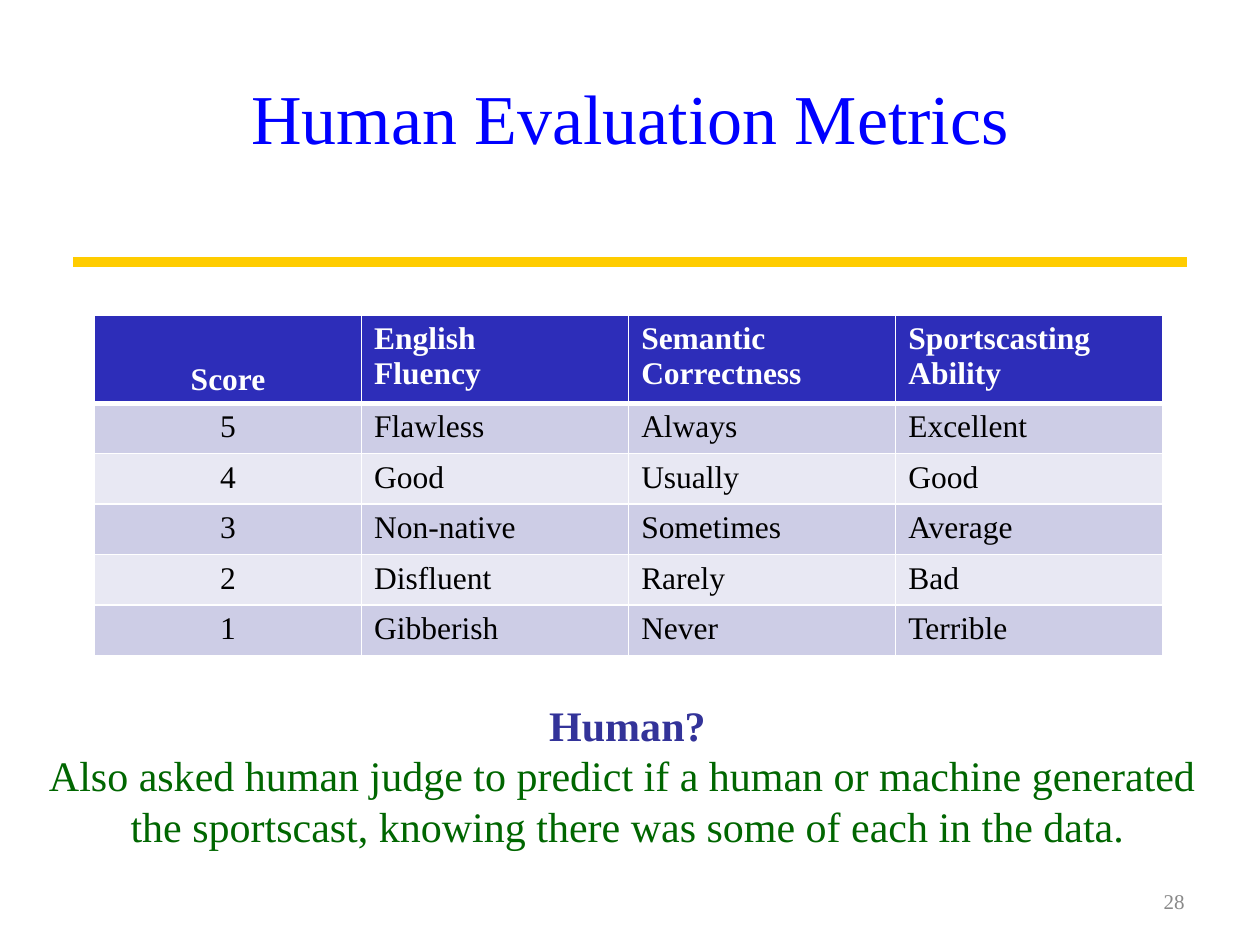
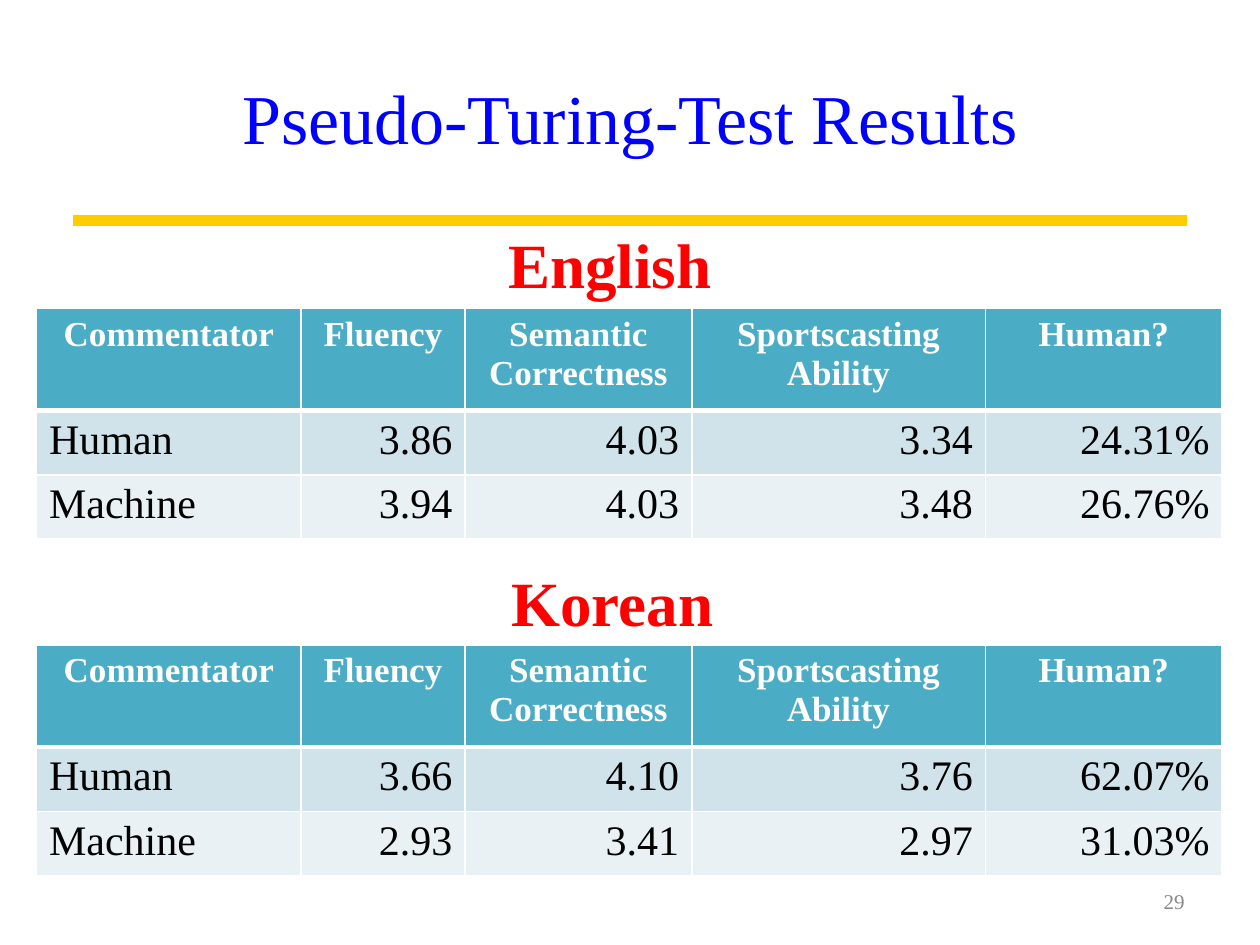
"""Build two slides on human evaluation of generated sportscasts."""
from lxml.etree import SubElement
from pptx import Presentation
from pptx.dml.color import RGBColor
from pptx.enum.shapes import MSO_CONNECTOR as Connector
from pptx.enum.text import MSO_ANCHOR as Anchor, PP_ALIGN as Align
from pptx.oxml.ns import qn
from pptx.util import Emu, Pt

PX = 9144
FONT = "Times New Roman"
WHITE = RGBColor(0xFF, 0xFF, 0xFF)
BLACK = RGBColor(0x00, 0x00, 0x00)
TITLE_BLUE = RGBColor(0x00, 0x00, 0xFF)
RULE_GOLD = RGBColor(0xFF, 0xCC, 0x00)
NUMBER_GRAY = RGBColor(0x89, 0x89, 0x89)
QUESTION_BLUE = RGBColor(0x33, 0x33, 0x99)
NOTE_GREEN = RGBColor(0x00, 0x66, 0x00)
LANGUAGE_RED = RGBColor(0xFF, 0x00, 0x00)
INDIGO_FILLS = (RGBColor(0x2D, 0x2D, 0xB9), RGBColor(0xCD, 0xCD, 0xE6), RGBColor(0xE8, 0xE8, 0xF3))
TEAL_FILLS = (RGBColor(0x4B, 0xAC, 0xC6), RGBColor(0xD0, 0xE3, 0xEA), RGBColor(0xE9, 0xF1, 0xF5))


def write(frame, text, size, color, bold=False, align=Align.CENTER):
    for line in text.split("\n"):
        para = frame.add_paragraph() if frame.text else frame.paragraphs[0]
        para.alignment = align
        span = para.add_run()
        span.text = line
        span.font.name = FONT
        span.font.size = Pt(size)
        span.font.bold = bold
        span.font.color.rgb = color


def add_grid(page, left, top, widths, heights, rows, fills, sizes, head_aligns, body_aligns):
    frame = page.shapes.add_table(len(rows), len(widths), Emu(left * PX), Emu(top * PX),
                                  Emu(sum(widths) * PX), Emu(sum(heights) * PX))
    grid = frame.table
    for column, width in zip(grid.columns, widths):
        column.width = Emu(width * PX)
    for r, (texts, height) in enumerate(zip(rows, heights)):
        grid.rows[r].height = Emu(height * PX)
        is_head = r == 0
        aligns = head_aligns if is_head else body_aligns
        for c, (text, align) in enumerate(zip(texts, aligns)):
            cell = grid.cell(r, c)
            write(cell.text_frame, text, sizes[0 if is_head else 1],
                  WHITE if is_head else BLACK, is_head, align)
            cell.fill.solid()
            cell.fill.fore_color.rgb = fills[0 if is_head else 2 - r % 2]
            properties = cell._tc.get_or_add_tcPr()
            thickness = {"lnL": 1, "lnR": 1, "lnT": 3 if r == 1 else 1, "lnB": 3 if is_head else 1}
            for place, (side, points) in enumerate(thickness.items()):
                border = SubElement(properties, qn(f"a:{side}"), w=str(Pt(points)))
                fill = SubElement(border, qn("a:solidFill"))
                SubElement(fill, qn("a:srgbClr"), val=str(WHITE))
                properties.insert(place, border)
    return grid


deck = Presentation()
deck.slide_width = Emu(1000 * PX)
deck.slide_height = Emu(750 * PX)

pages = []
for title, rule_top, number in (("Human Evaluation Metrics", 208, "28"),
                                ("Pseudo-Turing-Test Results", 175, "29")):
    page = deck.slides.add_slide(deck.slide_layouts[5])
    heading = page.shapes.title
    heading.left, heading.top, heading.width, heading.height = (
        Emu(n * PX) for n in (50, 30, 900, 125))
    heading.text_frame.vertical_anchor = Anchor.MIDDLE
    write(heading.text_frame, title, 40, TITLE_BLUE)

    rule = page.shapes.add_connector(Connector.STRAIGHT, Emu(58 * PX), Emu(rule_top * PX),
                                     Emu(942 * PX), Emu(rule_top * PX))
    rule.line.color.rgb = RULE_GOLD
    rule.line.width = Pt(6)
    SubElement(rule._element.spPr, qn("a:effectLst"))

    number_box = page.shapes.add_textbox(*(Emu(n * PX) for n in (717, 695, 233, 40)))
    number_box.text_frame.word_wrap = True
    number_box.text_frame.vertical_anchor = Anchor.MIDDLE
    write(number_box.text_frame, number, 12, NUMBER_GRAY, align=Align.RIGHT)
    pages.append(page)

metrics_page, results_page = pages

scale_rows = [
    ("Score", "English\nFluency", "Semantic Correctness", "Sportscasting Ability"),
    ("5", "Flawless", "Always", "Excellent"),
    ("4", "Good", "Usually", "Good"),
    ("3", "Non-native", "Sometimes", "Average"),
    ("2", "Disfluent", "Rarely", "Bad"),
    ("1", "Gibberish", "Never", "Terrible"),
]
scale_aligns = [Align.CENTER] + [Align.LEFT] * 3
scale_grid = add_grid(metrics_page, 75, 250, [212] * 4, [66] + [36] * 5, scale_rows,
                      INDIGO_FILLS, (18, 18), scale_aligns, scale_aligns)
scale_grid.cell(0, 0).vertical_anchor = Anchor.BOTTOM

question_box = metrics_page.shapes.add_textbox(*(Emu(n * PX) for n in (25, 550, 946, 131)))
question_box.text_frame.word_wrap = False
write(question_box.text_frame, "Human?", 24, QUESTION_BLUE, bold=True)
write(question_box.text_frame,
      "Also asked human judge to predict if a human or machine generated \n"
      "the sportscast, knowing there was some of each in the data.", 24, NOTE_GREEN)

result_head = ("Commentator", "Fluency", "Semantic\nCorrectness", "Sportscasting\nAbility", "Human?")
results = (
    ("English", 393, 174, 245, [("Human", "3.86", "4.03", "3.34", "24.31%"),
                                ("Machine", "3.94", "4.03", "3.48", "26.76%")]),
    ("Korean", 395, 442, 512, [("Human", "3.66", "4.10", "3.76", "62.07%"),
                               ("Machine", "2.93", "3.41", "2.97", "31.03%")]),
)
for language, label_left, label_top, grid_top, scores in results:
    label_box = results_page.shapes.add_textbox(
        *(Emu(n * PX) for n in (label_left, label_top, 182, 71)))
    label_box.text_frame.word_wrap = False
    write(label_box.text_frame, language, 36, LANGUAGE_RED, bold=True)
    add_grid(results_page, 29, grid_top, [210, 130, 180, 233, 188], [81, 51, 51],
             [result_head] + scores, TEAL_FILLS, (20, 24),
             [Align.CENTER] * 5, [Align.LEFT] + [Align.RIGHT] * 4)

deck.save("out.pptx")
